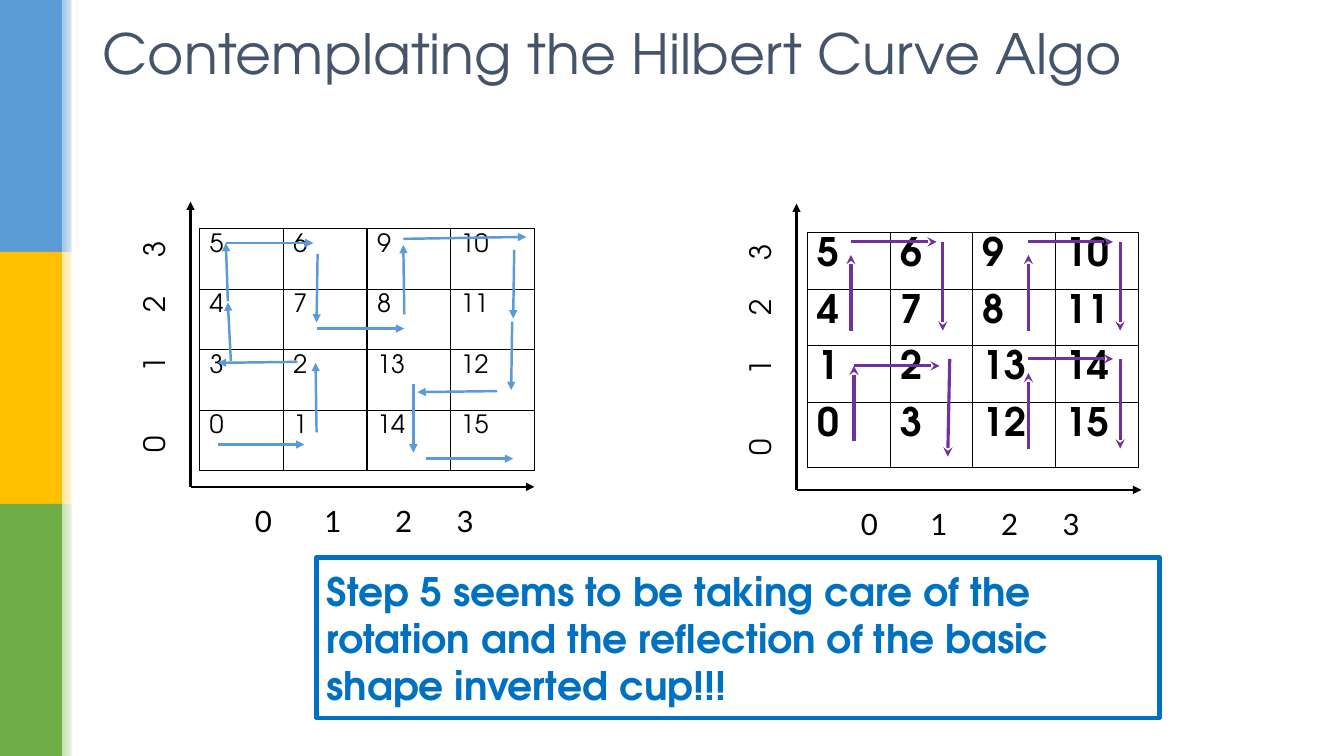
"""Build the slide comparing two 4 x 4 Hilbert curve numberings."""
from dataclasses import dataclass

from lxml import etree
from pptx import Presentation
from pptx.dml.color import RGBColor
from pptx.enum.shapes import MSO_CONNECTOR, MSO_SHAPE
from pptx.enum.text import MSO_ANCHOR, PP_ALIGN
from pptx.oxml.ns import qn
from pptx.util import Inches, Pt

STRAIGHT = MSO_CONNECTOR.STRAIGHT
RECTANGLE = MSO_SHAPE.RECTANGLE
MIDDLE, TOP = MSO_ANCHOR.MIDDLE, MSO_ANCHOR.TOP
LEFT = PP_ALIGN.LEFT


@dataclass(frozen=True)
class Theme:
    heading: str = "44546A"
    ink: str = "000000"
    paper: str = "FFFFFF"
    accent: str = "0070C0"
    purple: str = "7030A0"
    blue: str = "5B9BD5"
    font: str = "TeX Gyre Adventor"
    digits_font: str = "Lato"
    title_size: float = 39.6
    large: int = 28
    axis_size: int = 21
    small: int = 18


THEME = Theme()

TITLE = "Contemplating the Hilbert Curve Algo"
REMARK = ("Step 5 seems to be taking care of the rotation and the reflection "
          "of the basic shape inverted cup!!!")
SIDE_BANDS = [("5B9BD5", "9DC3E6"), ("FFC000", "FFE699"), ("70AD47", "C5E0B4")]
AXIS_LABELS = "0\t1\t2\t3"
ACROSS_STOPS = [0, 0.69, 1.39, 2.0]
UPWARD_STOPS = [0.24, 0.79, 1.39, 1.93]

GRIDS = [
    dict(
        numbers=[[5, 6, 9, 10], [4, 7, 8, 11], [1, 2, 13, 14], [0, 3, 12, 15]],
        place=(8.01, 2.31), column=0.82, rows=[0.56, 0.56, 0.56, 0.65],
        size=THEME.large, bold=True, origin=(7.9, 4.86), axis_ends=(11.32, 2.02),
        color=THEME.purple, width=2.25, head="stealth",
        steps=[
            (8.47, 4.38, 8.47, 3.63), (8.47, 3.63, 9.32, 3.63), (9.42, 3.56, 9.4, 4.53),
            (8.44, 3.28, 8.44, 2.53), (8.44, 2.4, 9.29, 2.4), (9.35, 2.4, 9.35, 3.28),
            (10.2, 3.28, 10.2, 2.53), (10.2, 2.4, 11.04, 2.4), (11.11, 2.4, 11.11, 3.28),
            (10.2, 4.45, 10.2, 3.7), (10.2, 3.56, 11.04, 3.56), (11.11, 3.56, 11.11, 4.45),
        ],
    ),
    dict(
        numbers=[[5, 6, 9, 10], [4, 7, 8, 11], [3, 2, 13, 12], [0, 1, 14, 15]],
        place=(1.98, 2.27), column=0.83, rows=[0.6] * 4,
        size=THEME.small, bold=False, origin=(1.89, 4.83), axis_ends=(5.3, 2.0),
        color=THEME.blue, width=1.75, head="triangle",
        steps=[
            (2.16, 4.41, 3.02, 4.41), (3.14, 4.29, 3.13, 3.6), (2.95, 3.59, 2.16, 3.6),
            (2.29, 3.58, 2.26, 3.0), (2.26, 2.99, 2.24, 2.41), (2.24, 2.41, 3.11, 2.41),
            (3.15, 2.52, 3.14, 3.2), (3.14, 3.26, 4.01, 3.26), (4.01, 3.12, 4.0, 2.43),
            (4.0, 2.37, 5.22, 2.35), (5.1, 2.48, 5.09, 3.16), (5.08, 3.19, 5.07, 3.87),
            (4.93, 3.88, 4.14, 3.89), (4.1, 3.81, 4.1, 4.49), (4.23, 4.55, 5.09, 4.55),
        ],
    ),
]


def rgb(color):
    return RGBColor.from_string(color)


def style(paragraph, size, color, name=THEME.font, bold=False):
    paragraph.alignment = LEFT
    font = paragraph.font
    font.size, font.name, font.bold = Pt(size), name, bold
    font.color.rgb = rgb(color)


def add_block(slide, box, fill=None):
    block = slide.shapes.add_shape(RECTANGLE, *map(Inches, box))
    block.shadow.inherit = False
    block.line.fill.background()
    if fill:
        block.fill.solid()
        block.fill.fore_color.rgb = rgb(fill)
    else:
        block.fill.background()
    return block


def add_side_bands(slide):
    height = 2.5
    for row, (strong, pale) in enumerate(SIDE_BANDS):
        add_block(slide, (0, row * height, 0.62, height), strong)
        fade = add_block(slide, (0.62, row * height, 0.16, height)).fill
        fade.gradient()
        fade.gradient_angle = 0
        for stop, color in zip(fade.gradient_stops, (pale, THEME.paper)):
            stop.color.rgb = rgb(color)
    add_block(slide, (0.71, 0, 0.05, 7.5), THEME.paper)


def add_arrow(slide, ends, color, width, head):
    arrow = slide.shapes.add_connector(STRAIGHT, *map(Inches, ends))
    arrow.line.color.rgb = rgb(color)
    arrow.line.width = Pt(width)
    etree.SubElement(arrow.line._get_or_add_ln(), qn("a:tailEnd"), type=head)
    etree.SubElement(arrow._element.spPr, qn("a:effectLst"))


def add_axis_labels(slide, left, top, stops, name, rotation=0):
    labels = add_block(slide, (left, top, 2.67, 0.5), THEME.paper)
    labels.rotation = rotation
    frame = labels.text_frame
    frame.word_wrap = True
    frame.vertical_anchor = TOP
    paragraph = frame.paragraphs[0]
    paragraph.text = AXIS_LABELS
    properties = paragraph._p.get_or_add_pPr()
    properties.set("marL", str(Inches(stops[0])))
    tabs = etree.SubElement(properties, qn("a:tabLst"))
    for stop in stops[1:]:
        etree.SubElement(tabs, qn("a:tab"), pos=str(Inches(stop)), algn="l")
    style(paragraph, THEME.axis_size, THEME.ink, name)


def add_border(cell):
    properties = cell._tc.get_or_add_tcPr()
    for position, side in enumerate(("lnL", "lnR", "lnT", "lnB")):
        line = etree.Element(qn(f"a:{side}"), w=str(Pt(1)))
        fill = etree.SubElement(line, qn("a:solidFill"))
        etree.SubElement(fill, qn("a:srgbClr"), val=THEME.ink)
        properties.insert(position, line)


def add_numbers(slide, grid):
    numbers, rows = grid["numbers"], grid["rows"]
    extent = (grid["column"] * len(numbers[0]), sum(rows))
    table = slide.shapes.add_table(len(rows), len(numbers[0]),
                                   *map(Inches, grid["place"] + extent)).table
    table.first_row = table.horz_banding = False
    for column in table.columns:
        column.width = Inches(grid["column"])
    for row, height, values in zip(table.rows, rows, numbers):
        row.height = Inches(height)
        for cell, value in zip(row.cells, values):
            cell.text = str(value)
            cell.fill.solid()
            cell.fill.fore_color.rgb = rgb(THEME.paper)
            add_border(cell)
            style(cell.text_frame.paragraphs[0], grid["size"], THEME.ink, bold=grid["bold"])


def add_grid(slide, grid):
    add_numbers(slide, grid)
    x, y = grid["origin"]
    right, top = grid["axis_ends"]
    for end in ((right, y), (x, top)):
        add_arrow(slide, (x, y) + end, THEME.ink, 1.75, "triangle")
    add_axis_labels(slide, x + 0.54, y + 0.11, ACROSS_STOPS, THEME.digits_font)
    add_axis_labels(slide, x - 1.67, y - 1.59, UPWARD_STOPS, THEME.font, 270)
    for step in grid["steps"]:
        add_arrow(slide, step, grid["color"], grid["width"], grid["head"])


def main():
    deck = Presentation()
    deck.slide_width, deck.slide_height = Inches(13.33), Inches(7.5)
    slide = deck.slides.add_slide(deck.slide_layouts[5])
    add_side_bands(slide)

    title = slide.shapes.title
    title.left, title.top, title.width, title.height = map(Inches, (0.92, 0.15, 11.5, 0.74))
    title.text_frame.text = TITLE
    title.text_frame.vertical_anchor = MIDDLE
    style(title.text_frame.paragraphs[0], THEME.title_size, THEME.heading)

    remark = add_block(slide, (3.14, 5.53, 8.36, 1.59))
    remark.line.color.rgb = rgb(THEME.accent)
    remark.line.width = Pt(3)
    remark.text_frame.text = REMARK
    remark.text_frame.word_wrap = True
    remark.text_frame.vertical_anchor = MIDDLE
    style(remark.text_frame.paragraphs[0], THEME.large, THEME.accent, bold=True)

    for grid in GRIDS:
        add_grid(slide, grid)
    deck.save("out.pptx")


if __name__ == "__main__":
    main()
